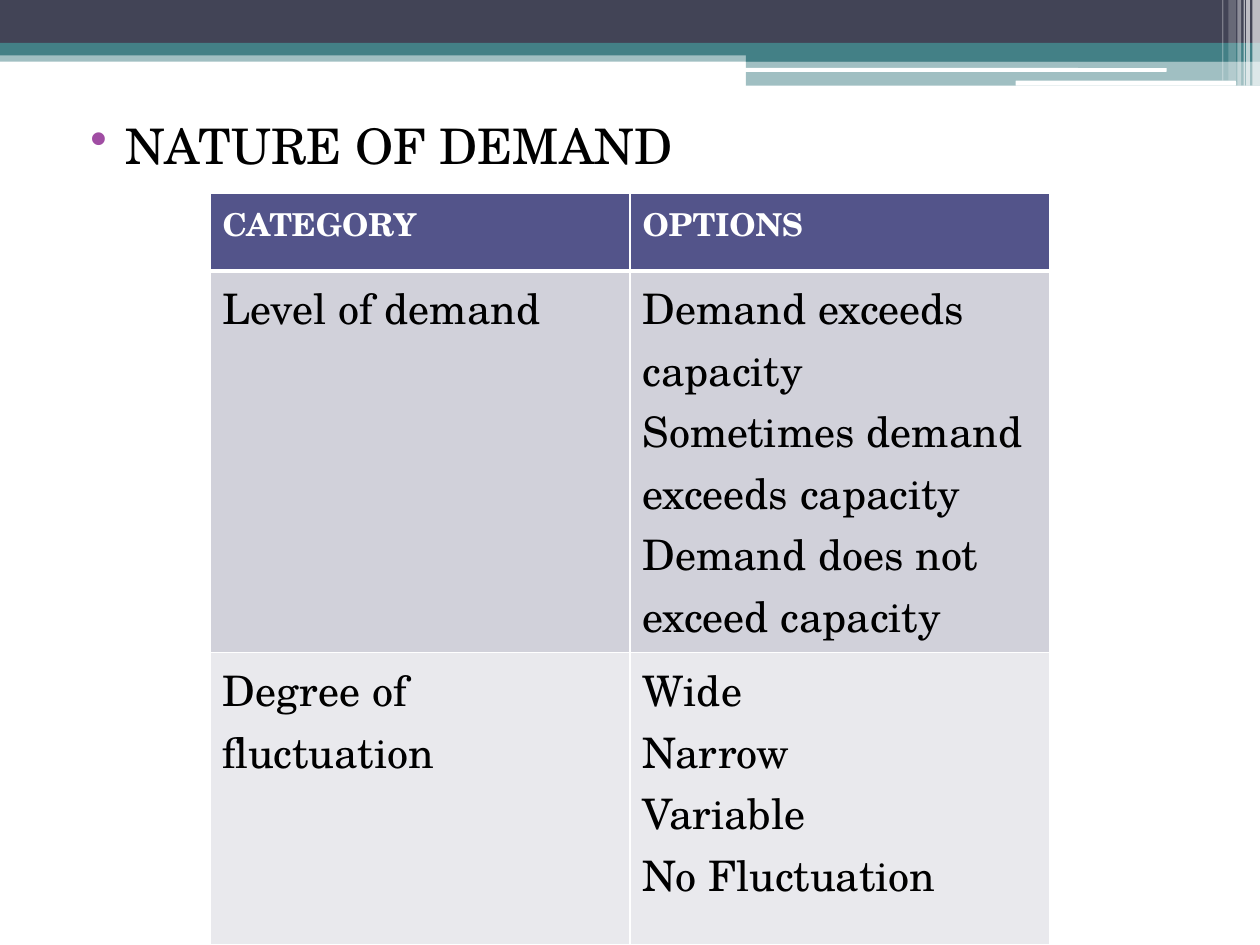
"""Build the slide on the nature of demand: a banded header, a title and a table."""
from dataclasses import dataclass
from typing import NamedTuple

import pptx
import pptx.dml.color
import pptx.enum.shapes
import pptx.oxml
import pptx.oxml.ns
import pptx.util

COLUMNS, ROWS = 100, 75
CELL = pptx.util.Inches(0.1)


@dataclass(frozen=True)
class Theme:
    font: str = "TeX Gyre Schola"
    ink: str = "000000"
    white: str = "FFFFFF"
    slate: str = "424456"
    teal: str = "438086"
    purple: str = "A04DA3"
    indigo: str = "53548A"
    bands: tuple = ("D1D1DA", "E9E9ED")
    title: int = 28
    heading: int = 18
    body: int = 24
    thin: int = 1
    thick: int = 3


class Box(NamedTuple):
    x: float
    y: float
    w: float
    h: float


class Bar(NamedTuple):
    box: Box
    color: str
    alpha: int = 100
    rounded: bool = False


class Stripe(NamedTuple):
    x: float
    w: float
    h: float
    alpha: int


THEME = Theme()
BARS = [
    Bar(Box(0, 4, COLUMNS, 0.9), THEME.teal, 50),
    Bar(Box(0, 0, COLUMNS, 3.4), THEME.slate),
    Bar(Box(0, 3.4, COLUMNS, 1), THEME.teal),
    Bar(Box(59.2, 3.9, 40.8, 1), THEME.teal),
    Bar(Box(59.2, 4.8, 40.8, 2), THEME.teal, 50),
    Bar(Box(59.1, 5.4, 33.5, 0.3), THEME.white, rounded=True),
    Bar(Box(80.6, 6.4, 17.5, 0.4), THEME.white, rounded=True),
]
STRIPES = [
    Stripe(99.4, 0.6, 6.8, 65),
    Stripe(98.9, 0.3, 6.8, 65),
    Stripe(98.7, 0.1, 6.8, 60),
    Stripe(98.2, 0.3, 6.8, 40),
    Stripe(97.5, 0.6, 6.4, 20),
    Stripe(97, 0.1, 6.4, 30),
]
TITLE_BOX = Box(5, 9.2, 90, 62.7)
TABLE_X, TABLE_Y, TABLE_W = COLUMNS / 6, 15.3, COLUMNS * 2 / 3
ROW_HEIGHTS = (6.2, 30.3, 23.2)
TABLE = [
    (["CATEGORY"], ["OPTIONS"]),
    (["Level of demand"],
     ["Demand exceeds capacity", "Sometimes demand exceeds capacity",
      "Demand does not exceed capacity"]),
    (["Degree of fluctuation"], ["Wide", "Narrow", "Variable", "No Fluctuation"]),
]


def grid(n: float) -> int:
    """Turn grid units into a length."""
    return round(n * CELL)


def rgb(color: str) -> pptx.dml.color.RGBColor:
    """Turn a hex string into a colour."""
    return pptx.dml.color.RGBColor.from_string(color)


def element(xml: str):
    """Parse a DrawingML fragment whose root carries the namespace."""
    head, rest = xml.split(">", 1)
    slash = "/" if head.endswith("/") else ""
    return pptx.oxml.parse_xml(
        f"{head.rstrip('/')} {pptx.oxml.ns.nsdecls('a')}{slash}>{rest}")


def write(p, text: str, *, size: int, color: str, bold: bool = False) -> None:
    """Add a formatted run to a paragraph."""
    r = p.add_run()
    r.text = text
    r.font.name = THEME.font
    r.font.size = pptx.util.Pt(size)
    r.font.bold = bold
    r.font.color.rgb = rgb(color)


def draw_bar(s, bar: Bar) -> None:
    """Draw a borderless bar, see-through where asked."""
    kinds = pptx.enum.shapes.MSO_SHAPE
    kind = kinds.ROUNDED_RECTANGLE if bar.rounded else kinds.RECTANGLE
    sp = s.shapes.add_shape(kind, *map(grid, bar.box))
    sp.shadow.inherit = False
    sp.line.fill.background()
    sp.fill.solid()
    sp.fill.fore_color.rgb = rgb(bar.color)
    if bar.alpha < 100:
        color = sp.fill._xPr.find(".//" + pptx.oxml.ns.qn("a:srgbClr"))
        color.append(element(f'<a:alpha val="{bar.alpha * 1000}"/>'))


def draw_title(s, text: str) -> None:
    """Draw the bulleted title."""
    tf = s.shapes.add_textbox(*map(grid, TITLE_BOX)).text_frame
    tf.word_wrap = True
    tf.margin_top = 0
    p = tf.paragraphs[0]
    pPr = p._p.get_or_add_pPr()
    pPr.set("marL", str(grid(4)))
    pPr.set("indent", str(grid(-2.8)))
    pPr.append(element(f'<a:buClr><a:srgbClr val="{THEME.purple}"/></a:buClr>'))
    pPr.append(element('<a:buChar char="•"/>'))
    write(p, text, size=THEME.title, color=THEME.ink)


def set_borders(cell, top: int, bottom: int) -> None:
    """Give a cell white borders, with widths in points above and below."""
    widths = {"L": THEME.thin, "R": THEME.thin, "T": top, "B": bottom}
    for side, width in widths.items():
        cell._tc.get_or_add_tcPr().append(element(
            f'<a:ln{side} w="{pptx.util.Pt(width)}"><a:solidFill>'
            f'<a:srgbClr val="{THEME.white}"/></a:solidFill></a:ln{side}>'))


def fill_cell(cell, lines: list[str], row: int) -> None:
    """Style a cell by its row and write one paragraph per line."""
    header = row == 0
    set_borders(cell, THEME.thick if row == 1 else THEME.thin,
                THEME.thick if header else THEME.thin)
    cell.fill.solid()
    cell.fill.fore_color.rgb = rgb(THEME.indigo if header else THEME.bands[row - 1])
    tf = cell.text_frame
    for i, line in enumerate(lines):
        p = tf.add_paragraph() if i else tf.paragraphs[0]
        write(p, line, size=THEME.heading if header else THEME.body,
              color=THEME.white if header else THEME.ink, bold=header)


def draw_table(s) -> None:
    """Draw the table of categories and their options."""
    box = Box(TABLE_X, TABLE_Y, TABLE_W, sum(ROW_HEIGHTS))
    table = s.shapes.add_table(len(TABLE), len(TABLE[0]), *map(grid, box)).table
    for i, (height, cells) in enumerate(zip(ROW_HEIGHTS, TABLE)):
        table.rows[i].height = grid(height)
        for j, lines in enumerate(cells):
            fill_cell(table.cell(i, j), lines, i)


def main() -> None:
    """Build and save the slide."""
    prs = pptx.Presentation()
    prs.slide_width, prs.slide_height = grid(COLUMNS), grid(ROWS)
    s = prs.slides.add_slide(prs.slide_layouts[6])
    stripes = [Bar(Box(t.x, 0, t.w, t.h), THEME.white, t.alpha) for t in STRIPES]
    for bar in BARS + stripes:
        draw_bar(s, bar)
    draw_title(s, "NATURE OF DEMAND")
    draw_table(s)
    prs.save("out.pptx")


if __name__ == "__main__":
    main()
